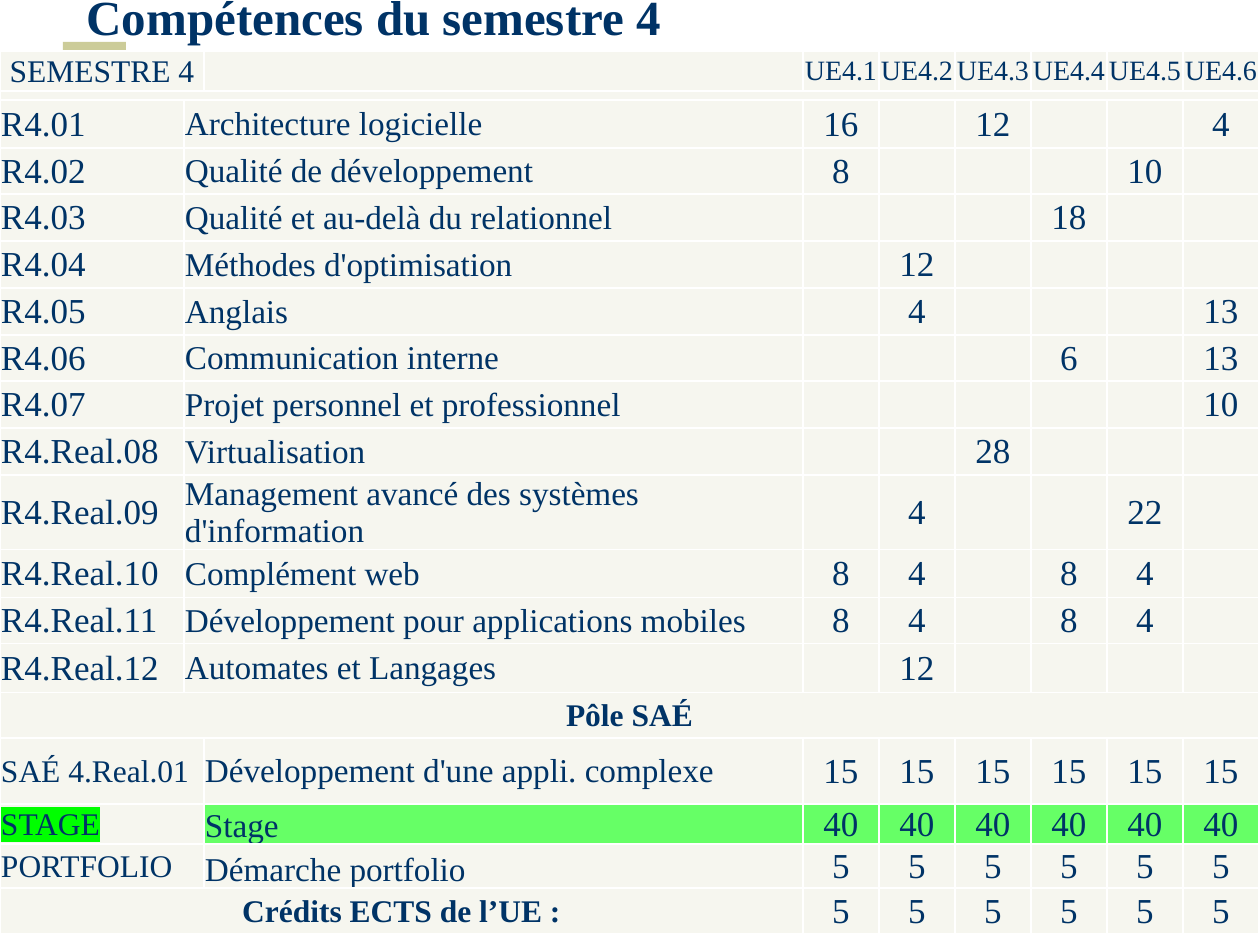
from lxml.etree import SubElement
from pptx import Presentation
from pptx.dml.color import RGBColor
from pptx.enum.shapes import MSO_SHAPE
from pptx.enum.text import MSO_ANCHOR, MSO_AUTO_SIZE, PP_ALIGN
from pptx.oxml import parse_xml
from pptx.oxml.ns import nsdecls, qn
from pptx.util import Pt

EMU_PER_PX = 914400 / 126
FONT = "Times New Roman"
NAVY = RGBColor(0x00, 0x33, 0x66)
KHAKI = RGBColor(0xCC, 0xCC, 0x99)
CREAM = RGBColor(0xF6, 0xF6, 0xEF)
LIGHT_GREEN = RGBColor(0x66, 0xFF, 0x66)
GREEN = RGBColor(0x00, 0xFF, 0x00)
WHITE = RGBColor(0xFF, 0xFF, 0xFF)

UNITS = [f"UE4.{number}" for number in range(1, 7)]
COLUMN_WIDTHS = [184, 20, 599] + [76] * len(UNITS)
FIRST_UNIT = 3

# Row height in px, code, label, hours for each unit
RESOURCES = [
    (48, "R4.01", "Architecture logicielle", "16,,12,,,4"),
    (46, "R4.02", "Qualité de développement", "8,,,,10,"),
    (47, "R4.03", "Qualité et au-delà du relationnel", ",,,18,,"),
    (47, "R4.04", "Méthodes d'optimisation", ",12,,,,"),
    (47, "R4.05", "Anglais", ",4,,,,13"),
    (46, "R4.06", "Communication interne", ",,,6,,13"),
    (47, "R4.07", "Projet personnel et professionnel", ",,,,,10"),
    (47, "R4.Real.08", "Virtualisation", ",,28,,,"),
    (74, "R4.Real.09", "Management avancé des systèmes d'information", ",4,,,22,"),
    (48, "R4.Real.10", "Complément web", "8,4,,8,4,"),
    (46, "R4.Real.11", "Développement pour applications mobiles", "8,4,,8,4,"),
    (49, "R4.Real.12", "Automates et Langages", ",12,,,,"),
]
# Row height in px, code, label, weight shared by all units, fill, highlight, label anchor
PROJECTS = [
    (66, "SAÉ 4.Real.01", "Développement d'une appli. complexe", "15", CREAM, None, MSO_ANCHOR.MIDDLE),
    (40, "STAGE", "Stage", "40", LIGHT_GREEN, GREEN, MSO_ANCHOR.BOTTOM),
    (44, "PORTFOLIO", "Démarche portfolio", "5", CREAM, None, MSO_ANCHOR.BOTTOM),
]
HEADER_HEIGHT, GAP_HEIGHT, POLE_HEIGHT, CREDITS_HEIGHT = 40, 9, 46, 46


def px(length):
    return round(length * EMU_PER_PX)


def write_text(frame, text, size=20, bold=False, align=PP_ALIGN.LEFT, highlight=None, spacing=None):
    paragraph = frame.paragraphs[0]
    paragraph.alignment = align
    paragraph.line_spacing = spacing
    run = paragraph.add_run()
    run.text = text
    font = run.font
    font.size, font.bold, font.name = Pt(size), bold, FONT
    font.color.rgb = NAVY
    if highlight is not None:
        mark = parse_xml(f'<a:highlight {nsdecls("a")}><a:srgbClr val="{highlight}"/></a:highlight>')
        font._element.find(qn("a:solidFill")).addnext(mark)


class SlideBuilder:
    def __init__(self, presentation):
        self.slide = presentation.slides.add_slide(presentation.slide_layouts[5])
        self.table = None

    def title(self, left, top, width, height, text):
        shape = self.slide.shapes.title
        shape.left, shape.top, shape.width, shape.height = map(px, (left, top, width, height))
        frame = shape.text_frame
        frame.word_wrap = True
        frame.auto_size = MSO_AUTO_SIZE.NONE
        frame.vertical_anchor = MSO_ANCHOR.MIDDLE
        write_text(frame, text, size=28, bold=True, spacing=0.85)

    def back_rectangle(self, left, top, width, height, color):
        shapes = self.slide.shapes
        shape = shapes.add_shape(MSO_SHAPE.RECTANGLE, *map(px, (left, top, width, height)))
        shape.shadow.inherit = False
        shape.fill.solid()
        shape.fill.fore_color.rgb = color
        shape.line.fill.background()
        shapes._spTree.insert(2, shape._element)

    def grid(self, left, top, widths, heights):
        """Add an empty cream table with white borders."""
        bounds = map(px, (left, top, sum(widths), sum(heights)))
        self.table = self.slide.shapes.add_table(len(heights), len(widths), *bounds).table
        self.table.first_row = self.table.horz_banding = False
        for column, width in zip(self.table.columns, widths):
            column.width = px(width)
        for row, height in zip(self.table.rows, heights):
            row.height = px(height)
        for cell in self.table.iter_cells():
            self.style_cell(cell)

    def style_cell(self, cell):
        cell.margin_left = cell.margin_right = cell.margin_top = px(1)
        cell.margin_bottom = 0
        cell.vertical_anchor = MSO_ANCHOR.MIDDLE
        cell.fill.solid()
        cell.fill.fore_color.rgb = CREAM
        properties = cell._tc.get_or_add_tcPr()
        for index, side in enumerate(("lnL", "lnR", "lnT", "lnB")):
            properties.insert(index, parse_xml(
                f'<a:{side} {nsdecls("a")} w="{Pt(1)}"><a:solidFill>'
                f'<a:srgbClr val="{WHITE}"/></a:solidFill></a:{side}>'))
        # A tiny end mark keeps empty cells from stretching their row
        SubElement(cell.text_frame.paragraphs[0]._p, qn("a:endParaRPr"), sz="100")

    def cell(self, row, column, text, span=1, fill=CREAM, anchor=MSO_ANCHOR.MIDDLE, **text_format):
        cell = self.table.cell(row, column)
        if span > 1:
            cell.merge(self.table.cell(row, column + span - 1))
        cell.fill.fore_color.rgb = fill
        cell.vertical_anchor = anchor
        if text:
            write_text(cell.text_frame, text, **text_format)

    def unit_cells(self, row, values, size=20, fill=CREAM):
        for column, value in enumerate(values, FIRST_UNIT):
            self.cell(row, column, value, size=size, fill=fill, align=PP_ALIGN.CENTER)


def fill_table(builder):
    builder.cell(0, 0, "SEMESTRE 4", span=2, size=18, align=PP_ALIGN.CENTER)
    builder.unit_cells(0, UNITS, size=16)
    builder.cell(1, 0, "", span=len(COLUMN_WIDTHS))

    for row, (_, code, label, hours) in enumerate(RESOURCES, 2):
        builder.cell(row, 0, code)
        builder.cell(row, 1, label, span=2, size=19)
        builder.unit_cells(row, hours.split(","))

    pole_row = 2 + len(RESOURCES)
    builder.cell(pole_row, 0, "Pôle SAÉ", span=len(COLUMN_WIDTHS), size=18, bold=True,
                 align=PP_ALIGN.CENTER)
    for row, (_, code, label, weight, fill, highlight, anchor) in enumerate(PROJECTS, pole_row + 1):
        builder.cell(row, 0, code, span=2, size=18, highlight=highlight)
        builder.cell(row, 2, label, size=19, fill=fill, anchor=anchor)
        builder.unit_cells(row, [weight] * len(UNITS), fill=fill)

    credits_row = pole_row + 1 + len(PROJECTS)
    builder.cell(credits_row, 0, "Crédits ECTS de l’UE :", span=3, size=18, bold=True,
                 align=PP_ALIGN.CENTER)
    builder.unit_cells(credits_row, ["5"] * len(UNITS))


def main():
    presentation = Presentation()
    presentation.slide_width, presentation.slide_height = px(1260), px(945)
    builder = SlideBuilder(presentation)
    builder.title(74, -14, 1051, 69, "Compétences du semestre 4")
    builder.back_rectangle(63, 42, 63, 199, KHAKI)
    heights = [HEADER_HEIGHT, GAP_HEIGHT, *(resource[0] for resource in RESOURCES),
               POLE_HEIGHT, *(project[0] for project in PROJECTS), CREDITS_HEIGHT]
    builder.grid(0, 51, COLUMN_WIDTHS, heights)
    fill_table(builder)
    presentation.save("out.pptx")


if __name__ == "__main__":
    main()
